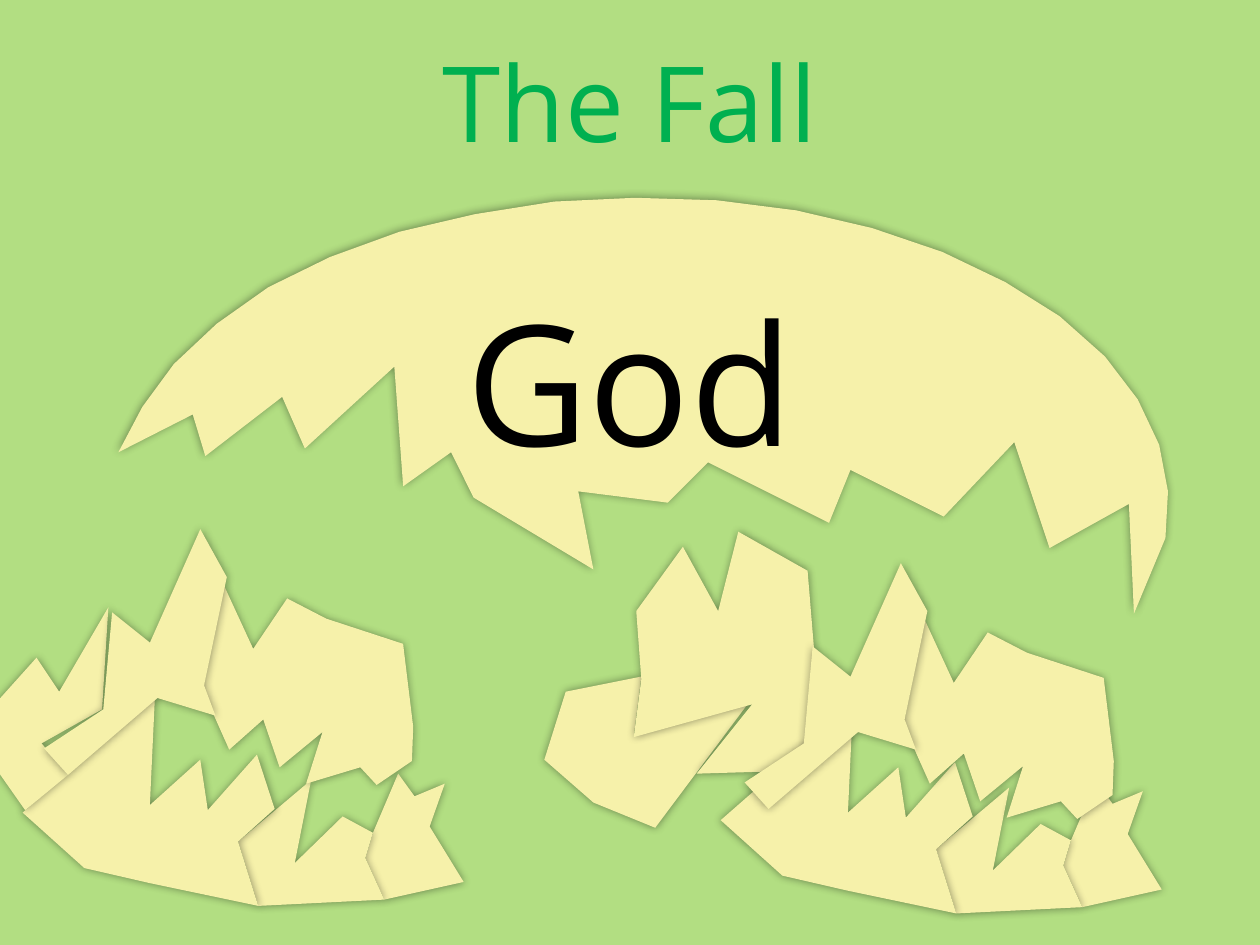
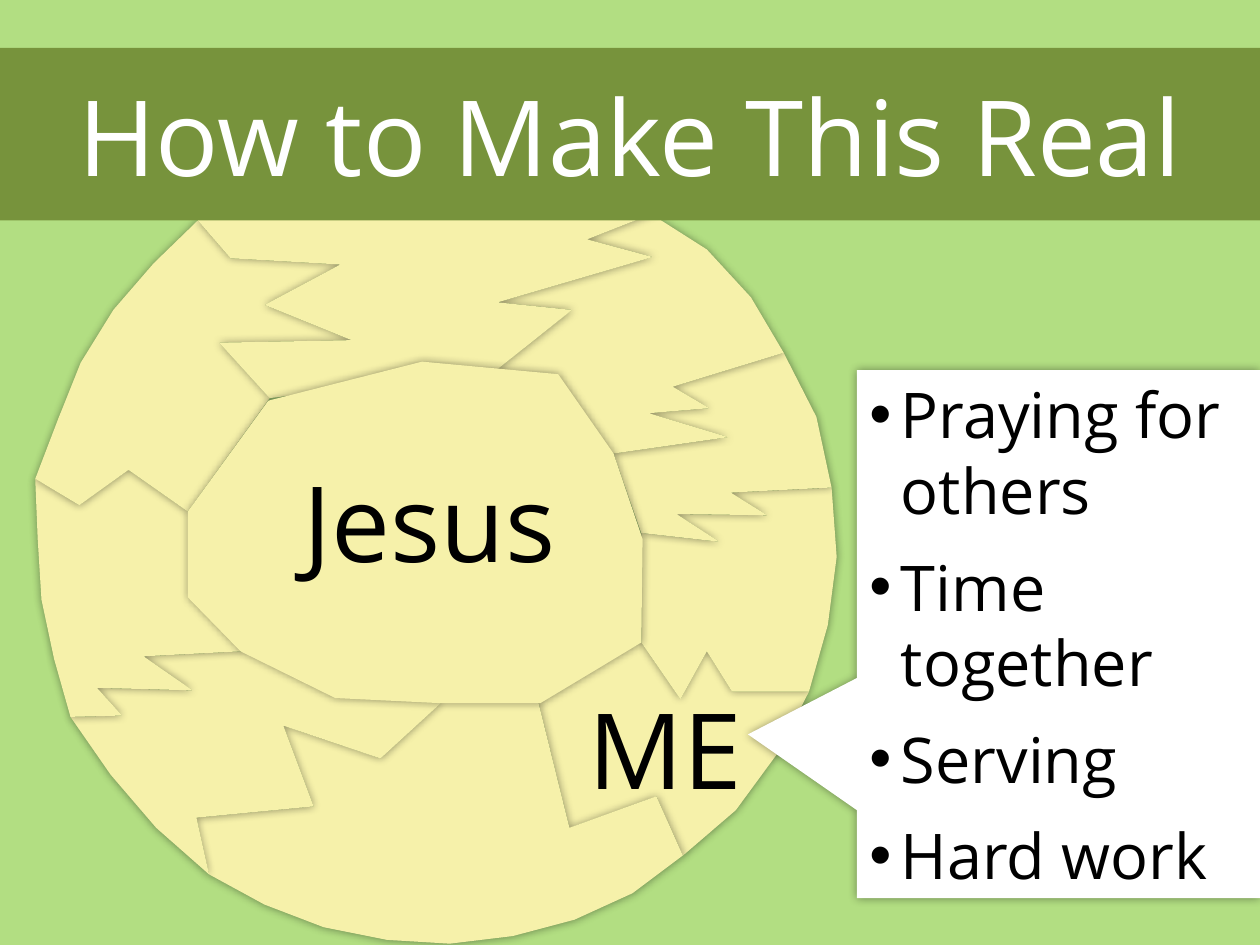
import math

import pptx
import pptx.dml.color
import pptx.enum.shapes
import pptx.enum.text
import pptx.oxml.ns
import pptx.util
from lxml import etree

Pt = pptx.util.Pt
ALIGN = pptx.enum.text.PP_ALIGN
qn = pptx.oxml.ns.qn
rgb = pptx.dml.color.RGBColor.from_string
FONT = "Open Sans"
COLORS = {
    "background": "B2DE82",
    "piece": "F6F1AA",
    "band": "77933C",
    "title": "00B050",
    "white": "FFFFFF",
    "text": "000000",
}
GRID = Pt(0.72)  # one unit of every outline; the slide is 1000 by 750 units
ARC_STEP = math.radians(9)


def arc(center, radii, start, end):
    """Points between start and end, clockwise along an ellipse, ends left out."""
    (cx, cy), (rx, ry) = center, radii
    first, last = [math.atan2((y - cy) / ry, (x - cx) / rx) for x, y in (start, end)]
    sweep = (last - first) % math.tau
    steps = max(1, round(sweep / ARC_STEP))
    angles = [first + sweep * i / steps for i in range(1, steps)]
    return [(cx + rx * math.cos(a), cy + ry * math.sin(a)) for a in angles]


def write_text(sp, box, lines, size, color, align=ALIGN.CENTER):
    """Place a text shape and fill it with one paragraph per line."""
    sp.left, sp.top, sp.width, sp.height = [Pt(v) for v in box]
    tf = sp.text_frame
    tf.text = "\n".join(lines)
    tf.word_wrap = True
    tf.auto_size = pptx.enum.text.MSO_AUTO_SIZE.NONE
    tf.vertical_anchor = pptx.enum.text.MSO_ANCHOR.MIDDLE
    for p in tf.paragraphs:
        p.alignment = align
        p.space_before = Pt(0)
        for r in p.runs:
            r.font.name = FONT
            r.font.size = Pt(size)
            r.font.color.rgb = rgb(COLORS[color])


prs = pptx.Presentation()
prs.slide_width, prs.slide_height = Pt(720), Pt(540)
fall = prs.slides.add_slide(prs.slide_layouts[5])
real = prs.slides.add_slide(prs.slide_layouts[1])

# Slide 1, dome: a torn lower edge from right to left, closed by an elliptic arc
torn_edge = [(925, 427), (900, 487), (896, 400), (833, 435), (805, 351), (749, 410),
             (675, 373), (658, 415), (562, 367), (530, 399), (459, 390), (471, 452),
             (376, 395), (358, 359), (320, 386), (313, 291), (242, 356), (224, 315),
             (163, 362), (153, 329), (94, 359)]
dome = torn_edge + arc((510, 397), (417, 240), torn_edge[-1], torn_edge[0])

# Slide 1, shards: neighbours at the bottom of the heap share a seam
star_seam = [(296, 661), (290, 681), (305, 714)]
wedge_seam = [(218, 642), (189, 668), (205, 719)]
shards = {
    "star": star_seam + [(368, 700), (341, 656), (353, 622), (329, 632), (316, 614)],
    "wedge": star_seam + wedge_seam[:0:-1] + [(247, 619), (234, 685), (272, 648)],
    "base": wedge_seam + [(119, 701), (67, 689), (18, 645), (123, 553), (119, 639),
                          (159, 603), (165, 643), (204, 599)],
    "block": [(228, 475), (201, 515), (178, 465), (161, 548), (182, 595), (209, 571),
              (222, 609), (256, 581), (243, 622), (286, 609), (299, 623), (327, 604),
              (328, 577), (320, 511), (259, 491)],
    "spike": [(180, 458), (159, 420), (119, 510), (89, 486), (82, 563), (35, 594),
              (54, 615), (125, 554), (171, 568), (162, 544)],
    "edge": [(-15, 571), (-6, 606), (20, 643), (54, 615), (33, 590), (81, 563),
             (86, 482), (47, 549), (29, 522)],
    "leaf": [(432, 603), (449, 549), (509, 537), (503, 584), (594, 558), (520, 657),
             (471, 637)],
    "tooth": [(505, 485), (509, 539), (503, 585), (597, 559), (553, 614), (654, 611),
              (641, 453), (586, 422), (570, 485), (542, 434)],
}
# Each heap, back to front; the right heap repeats the left one, moved
stay, low, high = (0, 0), (554, 6), (556, 27)
heaps = [("star", stay), ("wedge", stay), ("base", stay), ("block", stay),
         ("edge", stay), ("spike", stay),
         ("leaf", stay), ("tooth", stay), ("star", low), ("wedge", low),
         ("base", low), ("block", high), ("spike", high)]
shell = [dome] + [[(x + dx, y + dy) for x, y in shards[name]] for name, (dx, dy) in heaps]

# Slide 2, ring: clockwise, the crack where each piece begins, from centre to rim
cracks = {
    "top": [(214, 316), (174, 272), (279, 270), (210, 242), (270, 210), (183, 205), (157, 175)],
    "top right": [(395, 293), (454, 246), (395, 240), (518, 204), (466, 190), (517, 170)],
    "upper right": [(487, 360), (578, 347), (515, 328), (563, 324), (534, 307), (622, 280)],
    "right": [(509, 423), (571, 430), (537, 408), (609, 409), (580, 391), (660, 387)],
    "me": [(509, 510), (540, 555), (561, 517), (581, 549), (642, 549)],
    "bottom": [(427, 556), (452, 657), (521, 632), (542, 679)],
    "lower left": [(350, 558), (302, 602), (225, 576), (249, 640), (156, 649), (166, 694)],
    "left": [(191, 517), (114, 521), (153, 548), (77, 546), (97, 568), (56, 569)],
    "upper left": [(149, 406), (102, 373), (63, 401), (28, 380)],
}
clockwise = list(cracks)
back_to_front = ["me", "right", "upper right", "bottom", "lower left", "left",
                 "upper left", "top right", "top"]
ring = []
for name in back_to_front:
    following = clockwise[(clockwise.index(name) + 1) % len(clockwise)]
    begin, end = cracks[name], cracks[following]
    rim = arc((347, 432), (317, 317), begin[-1], end[-1])
    ring.append(begin + rim + end[::-1])
# The centre lies on top and covers the inner ends of the cracks
ring.append([(348, 558), (429, 558), (509, 510), (510, 428), (487, 360), (443, 297),
             (335, 287), (213, 318), (149, 406), (149, 474), (191, 517), (266, 554)])

cards = []
for s, outlines in ((fall, shell), (real, ring)):
    for outline in outlines:
        builder = s.shapes.build_freeform(*outline[0], scale=GRID)
        builder.add_line_segments(outline[1:], close=True)
        cards.append((builder.convert_to_shape(), "piece"))

# Slide 2: the title is the band, the list lies on a callout, both above the ring
title, body = real.shapes.title, real.placeholders[1]
real.shapes._spTree.append(title._element)
list_box = (489.6, 211.5, 230.4, 301.7)
callout = real.shapes.add_shape(pptx.enum.shapes.MSO_SHAPE.RECTANGULAR_CALLOUT,
                                *[Pt(v) for v in list_box])
callout.adjustments[0], callout.adjustments[1] = -0.77, 0.19
cards.append((callout, "white"))
real.shapes._spTree.append(body._element)

# Every card has a soft shadow all round and no outline
for sp, color in cards:
    sp.line.fill.background()
    sp.shadow.inherit = False
    effects = sp._element.spPr.find(qn("a:effectLst"))
    shadow = etree.SubElement(effects, qn("a:outerShdw"), blurRad=str(Pt(5)), dist="0",
                              dir="0", algn="ctr", rotWithShape="0")
    black = etree.SubElement(shadow, qn("a:srgbClr"), val=COLORS["text"])
    etree.SubElement(black, qn("a:alpha"), val="40000")

fills = [(sp.fill, color) for sp, color in cards]
fills += [(prs.slide_master.background.fill, "background"), (title.fill, "band")]
for fill, color in fills:
    fill.solid()
    fill.fore_color.rgb = rgb(COLORS[color])

# Text of both slides
write_text(fall.shapes.title, (0, 17.5, 720, 80), ["The Fall"], 60, "title")
write_text(title, (0, 27.3, 720, 98.6), ["How to Make This Real"], 60, "white")
write_text(body, list_box, ["Praying for others", "Time together", "Serving", "Hard work"],
           36, "text", ALIGN.LEFT)
for p in body.text_frame.paragraphs:
    p.space_after = Pt(12)
    pPr = p._p.get_or_add_pPr()
    pPr.set("marL", str(Pt(18)))
    pPr.set("indent", str(-Pt(18)))

labels = [(fall, "God", (0, 155, 720, 124), 96),
          (real, "Jesus", (104.4, 257.5, 282.2, 80), 60),
          (real, "ME", (239, 387.4, 282.2, 80), 60)]
for s, name, box, size in labels:
    write_text(s.shapes.add_textbox(0, 0, 0, 0), box, [name], size, "text")

prs.save("out.pptx")
